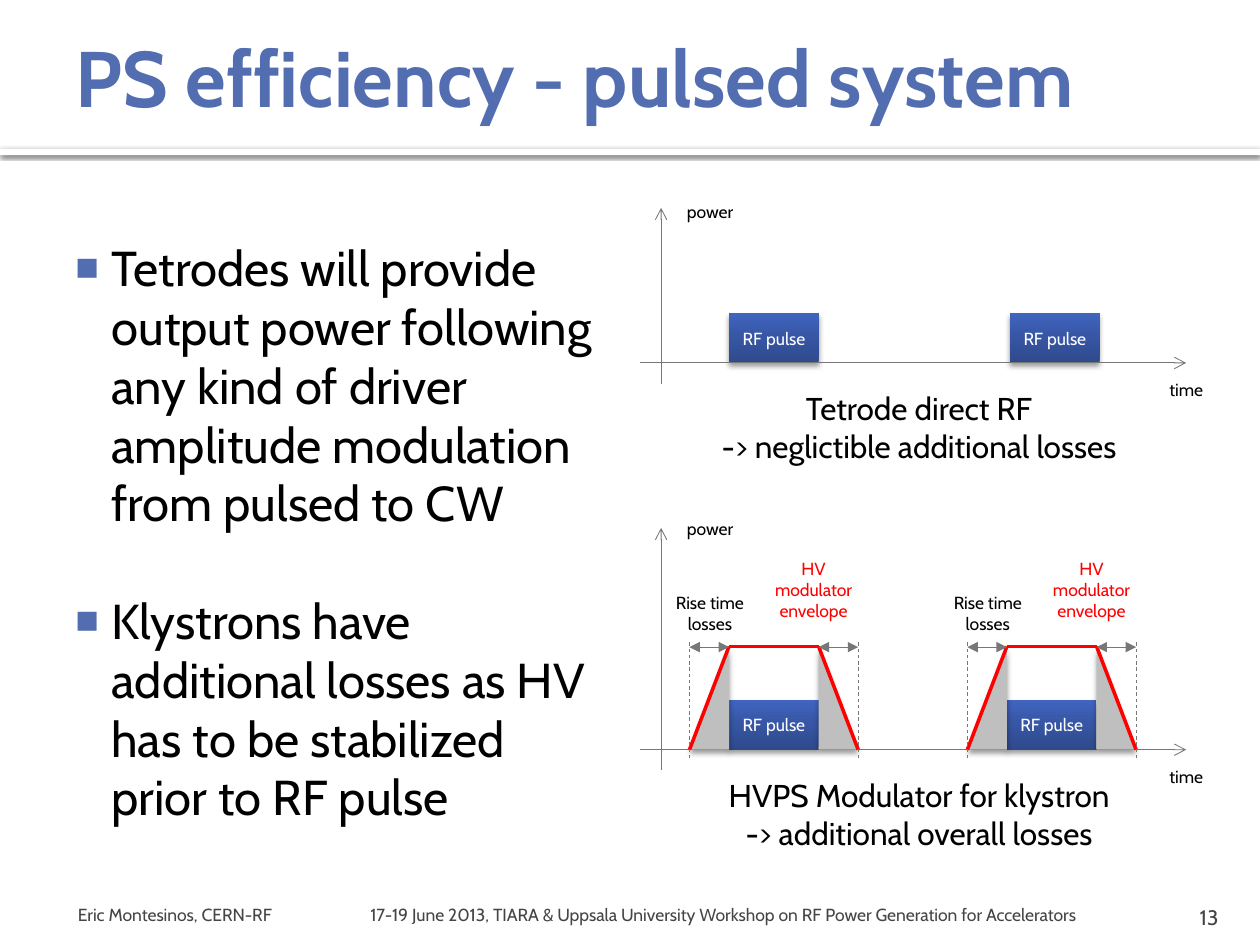
import pptx
import pptx.util
import pptx.dml.color
import pptx.enum.dml
import pptx.enum.shapes
import pptx.enum.text
import pptx.oxml
import pptx.oxml.ns

Pt = pptx.util.Pt
qn = pptx.oxml.ns.qn
SHAPE = pptx.enum.shapes.MSO_SHAPE
ANCHOR = pptx.enum.text.MSO_ANCHOR
ALIGN = pptx.enum.text.PP_ALIGN
DASH = pptx.enum.dml.MSO_LINE.DASH

FONT = "Cabin"
COLORS = {
    "accent": "526DB0", "text": "000000", "footer": "454545", "white": "FFFFFF",
    "axis": "777777", "envelope": "FF0000", "loss": "BFBFBF",
    "pulse_dark": "2F4A8C", "pulse_mid": "3756A5", "pulse_light": "4065C0",
}
PULSE_WIDTH, PULSE_HEIGHT = 51.2, 28.4
RISE = 22.6          # rise and fall time of the modulator
PERIOD = 158.8       # distance between two modulator envelopes
SOFT_SHADOW = (38, 3.1, 2)


def rgb(name):
    return pptx.dml.color.RGBColor.from_string(COLORS[name])


def add_child(parent, tag, **attributes):
    child = parent.makeelement(qn(tag), attributes)
    parent.append(child)
    return child


def write_lines(frame, lines, size, color, align=ALIGN.LEFT, bold=False):
    for index, line in enumerate(lines):
        paragraph = frame.add_paragraph() if index else frame.paragraphs[0]
        paragraph.alignment = align
        run = paragraph.add_run()
        run.text = line
        run.font.name, run.font.size, run.font.bold = FONT, Pt(size), bold
        run.font.color.rgb = rgb(color)


def set_frame(frame, anchor, insets):
    frame.word_wrap = True
    frame.vertical_anchor = anchor
    (frame.margin_left, frame.margin_top,
     frame.margin_right, frame.margin_bottom) = (Pt(inset) for inset in insets)


def add_text(slide, box, lines, size, color="text", align=ALIGN.CENTER,
             anchor=ANCHOR.TOP, insets=(7.2, 3.6, 7.2, 3.6), bold=False):
    frame = slide.shapes.add_textbox(*(Pt(length) for length in box)).text_frame
    set_frame(frame, anchor, insets)
    write_lines(frame, lines, size, color, align, bold)
    return frame


def add_bullets(slide, box, items, size):
    frame = add_text(slide, box, items, size, align=ALIGN.LEFT,
                     anchor=ANCHOR.MIDDLE, insets=(7.2, 7.2, 7.2, 3.6))
    for index, paragraph in enumerate(frame.paragraphs):
        paragraph.space_before = Pt(size * 1.2 if index else 0)
        properties = paragraph._p.get_or_add_pPr()
        properties.set("marL", str(Pt(20.6)))
        properties.set("indent", str(-Pt(20.6)))
        color = add_child(properties, "a:buClr")
        add_child(color, "a:srgbClr", val=COLORS["accent"])
        add_child(properties, "a:buSzPct", val="80000")
        add_child(properties, "a:buFont", typeface="Arial")
        add_child(properties, "a:buChar", char="■")


def add_block(slide, kind, box, color, shadow):
    shape = slide.shapes.add_shape(kind, *(Pt(length) for length in box))
    shape.fill.solid()
    shape.fill.fore_color.rgb = rgb(color)
    shape.line.fill.background()
    shape.shadow.inherit = False
    opacity, blur, distance = shadow
    effects = shape._element.spPr.find(qn("a:effectLst"))
    outer = add_child(effects, "a:outerShdw", blurRad=str(Pt(blur)),
                      dist=str(Pt(distance)), dir="5400000", rotWithShape="0")
    tint = add_child(outer, "a:srgbClr", val=COLORS["text"])
    add_child(tint, "a:alpha", val=str(opacity * 1000))
    return shape


def add_pulse(slide, left, baseline):
    box = (left, baseline - PULSE_HEIGHT, PULSE_WIDTH, PULSE_HEIGHT)
    shape = add_block(slide, SHAPE.RECTANGLE, box, "pulse_mid", SOFT_SHADOW)
    shape.fill.gradient()
    shape.fill.gradient_angle = 90
    stops = shape._element.spPr.find(qn("a:gradFill")).find(qn("a:gsLst"))
    for stop in list(stops):
        stops.remove(stop)
    for position, name in ((0, "pulse_dark"), (55, "pulse_mid"), (100, "pulse_light")):
        stop = add_child(stops, "a:gs", pos=str(position * 1000))
        add_child(stop, "a:srgbClr", val=COLORS[name])
    set_frame(shape.text_frame, ANCHOR.MIDDLE, (0, 3.6, 0, 3.6))
    write_lines(shape.text_frame, ["RF pulse"], 10, "white", ALIGN.CENTER)


def add_line(slide, start, end, color="axis", width=0.5, dash=None, head=None, tail=None):
    line = slide.shapes.add_connector(
        pptx.enum.shapes.MSO_CONNECTOR.STRAIGHT,
        *(Pt(length) for length in (*start, *end)))
    line.line.color.rgb = rgb(color)
    line.line.width = Pt(width)
    if dash:
        line.line.dash_style = dash
    for tag, kind in (("a:headEnd", head), ("a:tailEnd", tail)):
        if kind:
            add_child(line.line._get_or_add_ln(), tag, type=kind)
    add_child(line._element.spPr, "a:effectLst")


def add_axes(slide, baseline, top, bottom, power_top, time_top):
    add_line(slide, (365.8, baseline), (677.8, baseline), tail="arrow")
    add_line(slide, (377.8, bottom), (377.8, top), tail="arrow")
    add_text(slide, (377.3, power_top, 56.9, 19.4), ["power"], 10)
    add_text(slide, (649.4, time_top, 56.9, 19.4), ["time"], 10)


def add_modulator_pulse(slide, left, baseline):
    top = baseline - 59
    plateau_start = left + RISE
    plateau_end = plateau_start + PULSE_WIDTH
    right = plateau_end + RISE

    # RF pulse with the losses on both sides
    add_pulse(slide, plateau_start, baseline)
    for edge, apex in ((left, 1), (plateau_end, 0)):
        triangle = add_block(slide, SHAPE.ISOSCELES_TRIANGLE,
                             (edge, top, RISE, baseline - top), "loss", SOFT_SHADOW)
        triangle.adjustments[0] = apex

    # High-voltage envelope
    corners = [(left, baseline), (plateau_start, top), (plateau_end, top), (right, baseline)]
    for start, end in zip(corners, corners[1:]):
        add_line(slide, start, end, "envelope", 2)

    # Rise and fall time marks
    for outer, first, last in ((left, left, plateau_start), (right, plateau_end, right)):
        add_line(slide, (outer, baseline + 5), (outer, top - 3), dash=DASH.DASH)
        add_line(slide, (first, top + 0.4), (last, top + 0.4),
                 head="triangle", tail="triangle")

    add_text(slide, (left - 16.8, 334.8, 56.9, 31.7), ["Rise time losses"], 10)
    add_text(slide, (left + 39.6, 315.4, 62.6, 43.9), ["HV modulator envelope"], 10, "envelope")


def main():
    presentation = pptx.Presentation()
    presentation.slide_width, presentation.slide_height = Pt(720), Pt(540)
    slide = presentation.slides.add_slide(presentation.slide_layouts[6])

    # Heading and divider
    add_block(slide, SHAPE.RECTANGLE, (0, 85, 720, 3.6), "white", (60, 2.5, 0.8))
    add_text(slide, (36, 12.2, 648, 62.6), ["PS efficiency - pulsed system"], 45,
             "accent", ALIGN.LEFT, ANCHOR.MIDDLE, bold=True)

    # Main points
    add_bullets(slide, (36, 100, 318.2, 404), [
        "Tetrodes will provide output power following any kind of driver "
        "amplitude modulation from pulsed to CW",
        "Klystrons have additional losses as HV has to be stabilized prior to RF pulse",
    ], 28)

    # Tetrode diagram
    for left in (416.7, 577.2):
        add_pulse(slide, left, 207.4)
    add_axes(slide, 207.4, 118.8, 219.6, 111.6, 213.1)
    add_text(slide, (372.2, 218.9, 306, 51.1),
             ["Tetrode direct RF", "-> neglictible additional losses"], 18)

    # Klystron diagram
    add_axes(slide, 428.4, 301.7, 439.9, 292.3, 434.2)
    for index in range(2):
        add_modulator_pulse(slide, 394 + index * PERIOD, 428.4)
    add_text(slide, (372.2, 439.9, 306, 51.1),
             ["HVPS Modulator for klystron", "-> additional overall losses"], 18)

    # Footer
    add_text(slide, (36, 509.8, 167.8, 21.6), ["Eric Montesinos, CERN-RF"], 10,
             "footer", ALIGN.LEFT, ANCHOR.MIDDLE, (8.6, 3.6, 3.6, 0))
    add_text(slide, (208, 509.8, 433.4, 21.6),
             ["17-19 June 2013, TIARA & Uppsala University Workshop on "
              "RF Power Generation for Accelerators"], 10,
             "footer", ALIGN.LEFT, ANCHOR.MIDDLE, (3.6, 3.6, 3.6, 0))
    add_text(slide, (645.8, 509.8, 57.6, 21.6), ["13"], 12,
             "footer", ALIGN.RIGHT, ANCHOR.BOTTOM, (7.2, 3.6, 7.2, 0))

    presentation.save("out.pptx")


if __name__ == "__main__":
    main()
